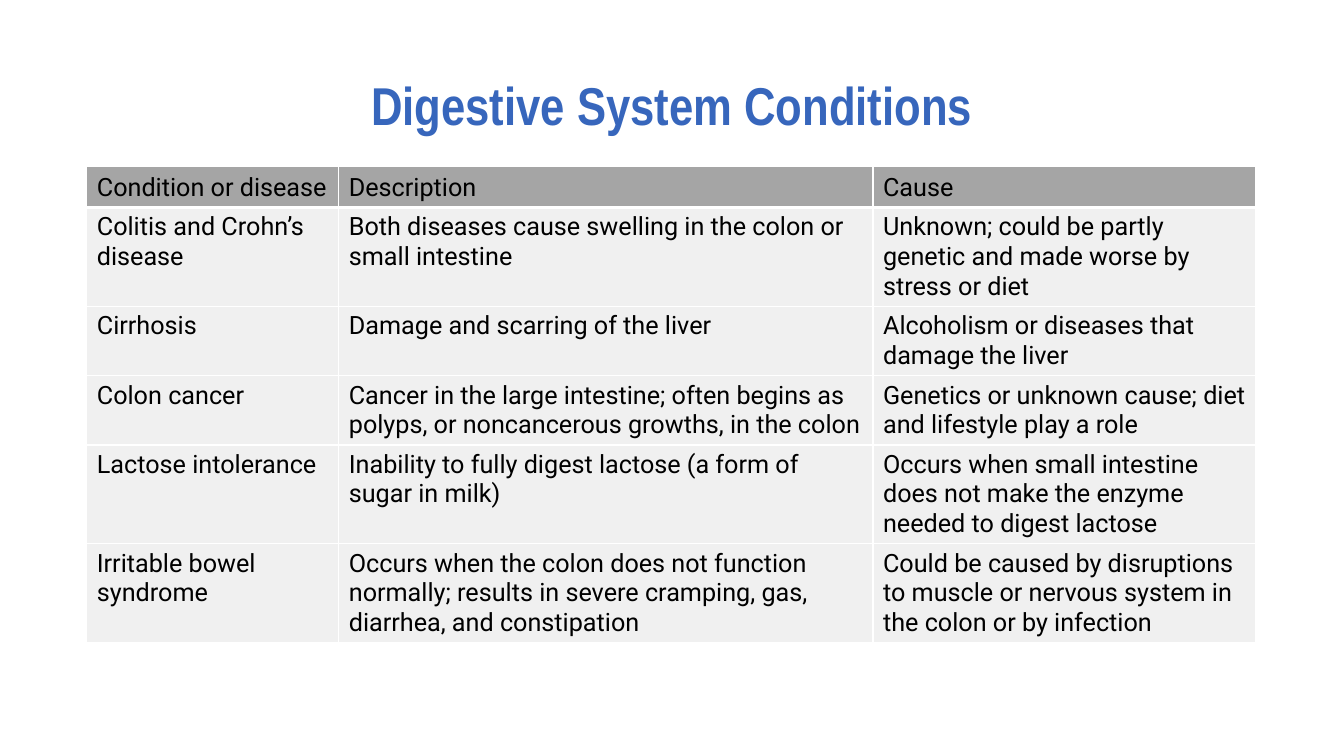
from lxml.etree import SubElement
from pptx import Presentation
from pptx.dml.color import RGBColor
from pptx.enum.text import MSO_ANCHOR, MSO_AUTO_SIZE, PP_ALIGN
from pptx.oxml.ns import qn
from pptx.util import Pt

SLIDE_WIDTH, SLIDE_HEIGHT = 960, 540
COLUMN_WIDTHS = [180, 381.6, 273.6]
ROW_HEIGHT = 29.5

CONDITIONS = [
    ("Condition or disease", "Description", "Cause"),
    ("Colitis and Crohn’s disease",
     "Both diseases cause swelling in the colon or small intestine",
     "Unknown; could be partly genetic and made worse by stress or diet"),
    ("Cirrhosis",
     "Damage and scarring of the liver",
     "Alcoholism or diseases that damage the liver"),
    ("Colon cancer",
     "Cancer in the large intestine; often begins as polyps, or noncancerous growths, in the colon",
     "Genetics or unknown cause; diet and lifestyle play a role"),
    ("Lactose intolerance",
     "Inability to fully digest lactose (a form of sugar in milk)",
     "Occurs when small intestine does not make the enzyme needed to digest lactose"),
    ("Irritable bowel\nsyndrome",
     "Occurs when the colon does not function normally; results in severe cramping, gas, "
     "diarrhea, and constipation",
     "Could be caused by disruptions to muscle or nervous system in the colon or by infection"),
]


def color(hex_string):
    return RGBColor.from_string(hex_string)


def format_font(font, name, size, hex_string, bold=False):
    font.name = name
    font.size = Pt(size)
    font.bold = bold
    font.color.rgb = color(hex_string)


def add_border(cell, side, width, hex_string):
    properties = cell._tc.get_or_add_tcPr()
    line = SubElement(properties, qn(f"a:ln{side}"), w=str(Pt(width)))
    fill = SubElement(line, qn("a:solidFill"))
    SubElement(fill, qn("a:srgbClr"), val=hex_string)


def fill_cell(cell, text, is_header, above_is_header):
    # Borders come before the fill in the cell properties
    widths = {"L": 1, "R": 1, "T": 3 if above_is_header else 1, "B": 3 if is_header else 1}
    for side, width in widths.items():
        add_border(cell, side, width, "FFFFFF")
    cell.fill.solid()
    cell.fill.fore_color.rgb = color("A5A5A5" if is_header else "F0F0F0")

    cell.vertical_anchor = MSO_ANCHOR.BOTTOM if is_header else MSO_ANCHOR.TOP
    cell.text_frame.text = text
    for paragraph in cell.text_frame.paragraphs:
        for run in paragraph.runs:
            format_font(run.font, "Roboto", 18, "000000")


def place_title(slide, left, top, width, height):
    title = slide.shapes.title
    title.left, title.top, title.width, title.height = Pt(left), Pt(top), Pt(width), Pt(height)
    frame = title.text_frame
    frame.text = "Digestive System Conditions"
    frame.margin_left = frame.margin_right = frame.margin_top = frame.margin_bottom = 0
    frame.vertical_anchor = MSO_ANCHOR.MIDDLE
    frame.auto_size = MSO_AUTO_SIZE.NONE
    paragraph = frame.paragraphs[0]
    paragraph.alignment = PP_ALIGN.CENTER
    paragraph.line_spacing = 0.9
    format_font(paragraph.runs[0].font, "Arial Narrow", 38, "3766BC", bold=True)


def add_conditions_table(slide, left, top):
    row_count = len(CONDITIONS)
    table = slide.shapes.add_table(
        row_count, len(COLUMN_WIDTHS), Pt(left), Pt(top),
        Pt(sum(COLUMN_WIDTHS)), Pt(ROW_HEIGHT * row_count)).table
    table.horz_banding = False
    table.first_row = False
    for column, width in zip(table.columns, COLUMN_WIDTHS):
        column.width = Pt(width)
    # Rows grow with their text
    for row_index, texts in enumerate(CONDITIONS):
        table.rows[row_index].height = Pt(ROW_HEIGHT)
        for column_index, text in enumerate(texts):
            fill_cell(table.cell(row_index, column_index), text, row_index == 0, row_index == 1)


def main():
    presentation = Presentation()
    presentation.slide_width = Pt(SLIDE_WIDTH)
    presentation.slide_height = Pt(SLIDE_HEIGHT)
    slide = presentation.slides.add_slide(presentation.slide_layouts[5])

    # Title above the table
    place_title(slide, 0, 44, SLIDE_WIDTH, 67)
    add_conditions_table(slide, 62, 118.8)

    presentation.save("out.pptx")


if __name__ == "__main__":
    main()
